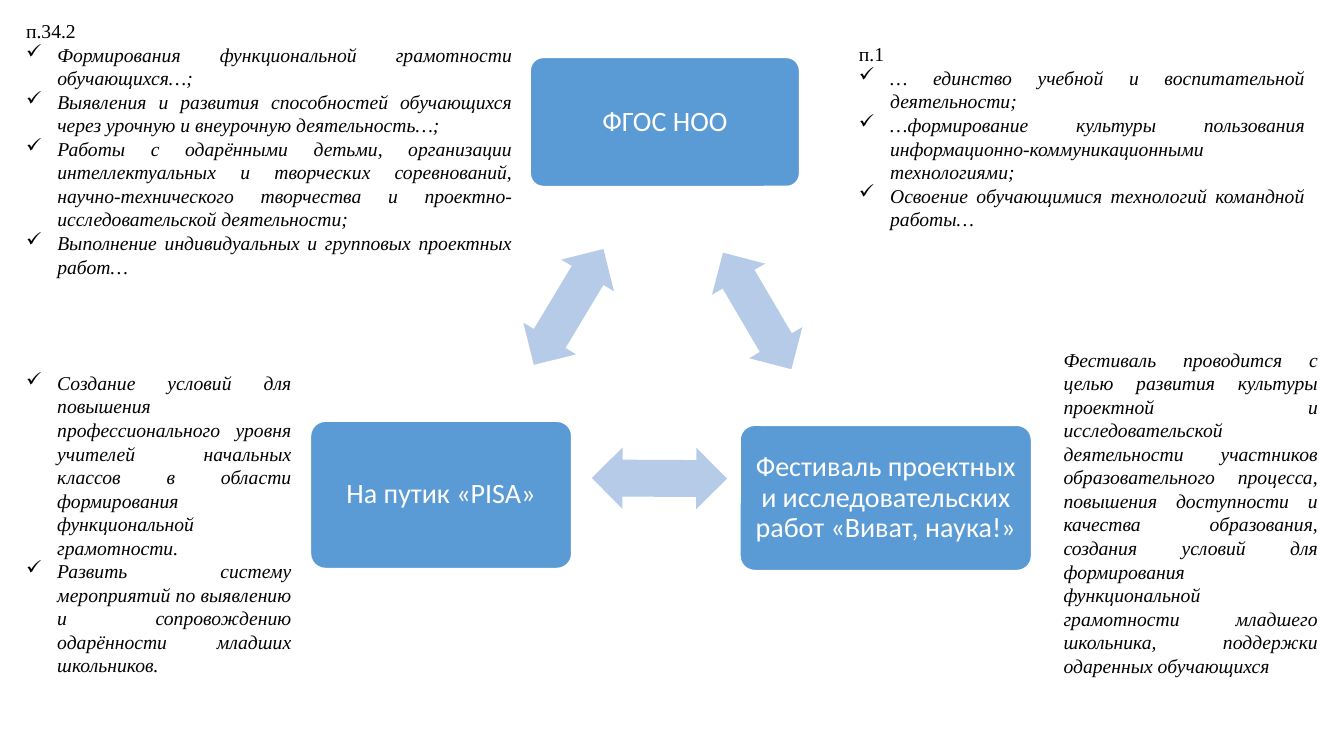
from lxml import etree
from pptx import Presentation
from pptx.dml.color import RGBColor
from pptx.enum.shapes import MSO_SHAPE
from pptx.enum.text import MSO_ANCHOR, MSO_AUTO_SIZE, PP_ALIGN
from pptx.oxml.ns import qn
from pptx.util import Inches, Pt

ROUND_RECT = MSO_SHAPE.ROUNDED_RECTANGLE
DOUBLE_ARROW = MSO_SHAPE.LEFT_RIGHT_ARROW
MIDDLE = MSO_ANCHOR.MIDDLE
CENTER, JUSTIFY = PP_ALIGN.CENTER, PP_ALIGN.JUSTIFY
GROW = MSO_AUTO_SIZE.SHAPE_TO_FIT_TEXT
BLUE, PALE_BLUE, WHITE, BLACK = "5B9BD5", "B5CBE7", "FFFFFF", "000000"


def rgb(color):
    return RGBColor.from_string(color)


def add_check(p):
    """Give the paragraph a hanging check-mark bullet."""
    pPr = p._p.get_or_add_pPr()
    pPr.set("marL", str(Inches(0.31)))
    pPr.set("indent", str(-Inches(0.31)))
    etree.SubElement(pPr, qn("a:buChar")).set("char", "✓")


prs = Presentation()
prs.slide_width, prs.slide_height = Inches(13.33), Inches(7.5)
s = prs.slides.add_slide(prs.slide_layouts[6])

# Cycle: three boxes
boxes = [
    ("ФГОС НОО", 5.26, 0.57, 2.67, 1.28),
    ("Фестиваль проектных и исследовательских работ «Виват, наука!»",
     7.34, 4.22, 2.89, 1.44),
    ("На путик «PISA»", 3.08, 4.18, 2.59, 1.46),
]
for text, *place in boxes:
    sp = s.shapes.add_shape(ROUND_RECT, *map(Inches, place))
    sp.shadow.inherit = False
    sp.adjustments[0] = 0.1
    sp.fill.solid()
    sp.fill.fore_color.rgb = rgb(BLUE)
    sp.line.color.rgb = rgb(WHITE)
    sp.line.width = Pt(1)
    tf = sp.text_frame
    tf.word_wrap = True
    tf.vertical_anchor = MIDDLE
    tf.margin_left = tf.margin_right = Inches(0.08)
    tf.margin_top = tf.margin_bottom = Inches(0.08)
    tf.text = text
    p = tf.paragraphs[0]
    p.alignment = CENTER
    p.line_spacing = 0.9
    font = p.runs[0].font
    font.name, font.size = "Calibri", Pt(20)
    font.color.rgb = rgb(WHITE)

# Cycle: arrows between the boxes
for left, top, angle in [(6.84, 2.78, 59.6), (5.87, 4.44, 180.3), (4.97, 2.74, 301)]:
    sp = s.shapes.add_shape(DOUBLE_ARROW, Inches(left), Inches(top),
                            Inches(1.34), Inches(0.61))
    sp.shadow.inherit = False
    sp.adjustments[0], sp.adjustments[1] = 0.6, 0.5
    sp.rotation = angle
    sp.fill.solid()
    sp.fill.fore_color.rgb = rgb(PALE_BLUE)
    sp.line.fill.background()

# Notes around the cycle: place, then (style, text) paragraphs
notes = [
    ((8.42, 0.37, 4.62, 1.99), [
        ("heading", "п.1"),
        ("check", "… единство учебной и воспитательной деятельности;"),
        ("check", "…формирование культуры пользования "
                  "информационно-коммуникационными технологиями;"),
        ("check", "Освоение обучающимися технологий командной работы…"),
    ]),
    ((0.16, 0.14, 5.02, 2.69), [
        ("heading", "п.34.2"),
        ("check", "Формирования функциональной грамотности обучающихся…;"),
        ("check", "Выявления и развития способностей обучающихся через "
                  "урочную и внеурочную деятельность…;"),
        ("check", "Работы с одарёнными детьми, организации интеллектуальных и "
                  "творческих соревнований, научно-технического творчества и "
                  "проектно-исследовательской деятельности;"),
        ("check", "Выполнение индивидуальных и групповых проектных работ…"),
    ]),
    ((10.45, 3.4, 2.72, 3.4), [
        ("plain", "Фестиваль проводится с целью развития культуры проектной и "
                  "исследовательской деятельности участников образовательного "
                  "процесса, повышения доступности и качества образования, "
                  "создания условий для формирования функциональной грамотности "
                  "младшего школьника, поддержки одаренных обучающихся"),
    ]),
    ((0.16, 3.63, 2.83, 3.16), [
        ("check", "Создание условий для повышения профессионального уровня "
                  "учителей начальных классов в области формирования "
                  "функциональной грамотности."),
        ("check", "Развить систему мероприятий по выявлению и сопровождению "
                  "одарённости младших школьников."),
    ]),
]
for place, paragraphs in notes:
    tf = s.shapes.add_textbox(*map(Inches, place)).text_frame
    tf.word_wrap = True
    tf.auto_size = GROW
    tf.text = "\n".join(text for _, text in paragraphs)
    for p, (style, _) in zip(tf.paragraphs, paragraphs):
        p.alignment = JUSTIFY
        if style == "check":
            add_check(p)
        font = p.runs[0].font
        font.name, font.size = "Times New Roman", Pt(14)
        font.italic = style != "heading"
        font.color.rgb = rgb(BLACK)

prs.save("out.pptx")
